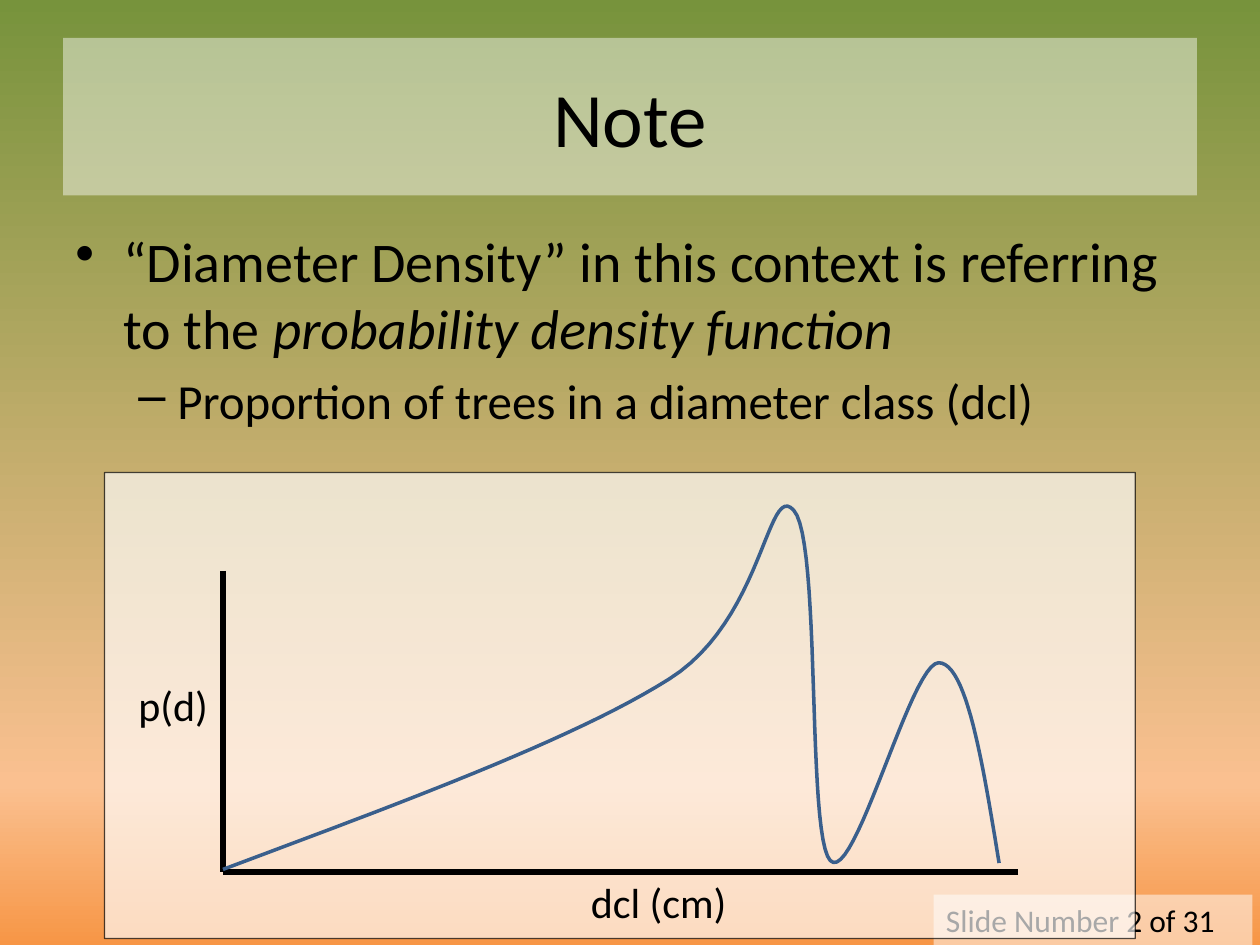
import copy

import pptx
import pptx.dml.color
import pptx.enum.shapes
import pptx.enum.text
import pptx.oxml.ns
import pptx.util
from lxml import etree
from pptx.oxml.ns import qn
from pptx.util import Inches

COLORS = {
    "green": "77933C",
    "peach": "FAC090",
    "orange": "F79646",
    "white": "FFFFFF",
    "black": "000000",
    "curve": "3A5F8C",
}


def paint(color_format, name):
    color_format.rgb = pptx.dml.color.RGBColor.from_string(COLORS[name])


def write(para, text, size, italic=False):
    span = para.add_run()
    span.text = text
    span.font.name = "Calibri"
    span.font.size = pptx.util.Pt(size)
    span.font.italic = italic
    paint(span.font.color, "black")


deck = pptx.Presentation()
deck.slide_width, deck.slide_height = Inches(10), Inches(7.5)
page = deck.slides.add_slide(deck.slide_layouts[5])

# Background gradient, top to bottom
background = page.background.fill
background.gradient()
background.gradient_angle = 270
stop_list = page._element.find(".//" + qn("a:gsLst"))
stop_list.insert(1, copy.deepcopy(stop_list[0]))
stops = [(0, "green"), (0.83, "peach"), (1, "orange")]
for stop, (position, name) in zip(background.gradient_stops, stops):
    stop.position = position
    paint(stop.color, name)

# Title
title = page.shapes.title
title.left, title.top = Inches(0.5), Inches(0.3)
title.width, title.height = Inches(9), Inches(1.25)
title.text_frame.vertical_anchor = pptx.enum.text.MSO_ANCHOR.MIDDLE
heading = title.text_frame.paragraphs[0]
heading.alignment = pptx.enum.text.PP_ALIGN.CENTER
write(heading, "Note", 44)

# Slide number
rectangle = pptx.enum.shapes.MSO_SHAPE.RECTANGLE
footer = page.shapes.add_shape(rectangle, Inches(7.41), Inches(7.1), Inches(2.53), Inches(0.4))
footer.line.fill.background()
footer.text_frame.word_wrap = False
footer.text_frame.vertical_anchor = pptx.enum.text.MSO_ANCHOR.TOP
number = footer.text_frame.paragraphs[0]
number.alignment = pptx.enum.text.PP_ALIGN.LEFT
write(number, "Slide Number 2 of 31", 18)

# Bulleted text: size, left margin, hanging indent, bullet, runs with italic flag
body = page.shapes.add_textbox(Inches(0.5), Inches(1.75), Inches(9), Inches(4.95))
body.text_frame.word_wrap = True
items = [
    (32, 0.38, 0.38, "•", [
        ("“Diameter Density” in this context is referring to the ", False),
        ("probability density function", True),
    ]),
    (28, 0.81, 0.31, "–", [("Proportion of trees in a diameter class (dcl)", False)]),
]
for level, (size, margin, hanging, bullet, spans) in enumerate(items):
    para = body.text_frame.add_paragraph() if level else body.text_frame.paragraphs[0]
    properties = para._p.get_or_add_pPr()
    properties.set("marL", str(Inches(margin)))
    properties.set("indent", str(-Inches(hanging)))
    etree.SubElement(properties, qn("a:buChar")).set("char", bullet)
    para.level = level
    if level:
        para.space_before = pptx.util.Pt(5.6)
    for text, italic in spans:
        write(para, text, size, italic)

# Plot panel
plot = page.shapes.add_group_shape().shapes
panel = plot.add_shape(rectangle, Inches(0.83), Inches(3.75), Inches(8.18), Inches(3.7))
panel.line.width = pptx.util.Pt(0.75)
paint(panel.line.color, "black")
outline = panel._element.spPr.find(qn("a:ln")).find(".//" + qn("a:srgbClr"))
etree.SubElement(outline, qn("a:alpha")).set("val", "70000")

# Translucent white fills
for shape, opacity in [(title, 45), (footer, 51), (panel, 66)]:
    shape.shadow.inherit = False
    shape.fill.solid()
    paint(shape.fill.fore_color, "white")
    fill_color = shape._element.spPr.find(qn("a:solidFill")).find(qn("a:srgbClr"))
    etree.SubElement(fill_color, qn("a:alpha")).set("val", str(opacity * 1000))

# Axes from the shared origin
origin_x, origin_y = 1.77, 6.92
for end_x, end_y in [(origin_x, 4.53), (8.08, origin_y)]:
    axis = plot.add_connector(
        pptx.enum.shapes.MSO_CONNECTOR.STRAIGHT,
        Inches(end_x), Inches(end_y), Inches(origin_x), Inches(origin_y),
    )
    axis.line.width = pptx.util.Pt(3.25)
    paint(axis.line.color, "black")
    etree.SubElement(axis._element.spPr, qn("a:effectLst"))

# Density curve, sampled from cubic Bezier segments
start = (1.77, 6.9)
segments = [
    [(3.16, 6.38), (4.55, 5.87), (5.31, 5.39)],
    [(6.06, 4.92), (6.09, 3.81), (6.3, 4.05)],
    [(6.52, 4.29), (6.4, 6.63), (6.59, 6.83)],
    [(6.78, 7.03), (7.23, 5.26), (7.45, 5.26)],
    [(7.67, 5.26), (7.8, 6.05), (7.93, 6.85)],
]
steps = 24
points = []
knot = start
for segment in segments:
    controls = [knot] + segment
    for step in range(1, steps + 1):
        t = step / steps
        weights = [(1 - t) ** 3, 3 * t * (1 - t) ** 2, 3 * t ** 2 * (1 - t), t ** 3]
        points.append(tuple(
            Inches(sum(weight * control[i] for weight, control in zip(weights, controls)))
            for i in (0, 1)
        ))
    knot = segment[-1]
builder = plot.build_freeform(Inches(start[0]), Inches(start[1]))
builder.add_line_segments(points, close=False)
curve = builder.convert_to_shape()
curve.shadow.inherit = False
curve.fill.background()
curve.line.width = pptx.util.Pt(2)
paint(curve.line.color, "curve")

# Axis labels
for text, left, top, width in [("p(d)", 1, 5.34, 0.76), ("dcl (cm)", 4.59, 6.91, 1.29)]:
    label = plot.add_textbox(Inches(left), Inches(top), Inches(width), Inches(0.5))
    label.text_frame.word_wrap = False
    label.text_frame.auto_size = pptx.enum.text.MSO_AUTO_SIZE.SHAPE_TO_FIT_TEXT
    write(label.text_frame.paragraphs[0], text, 24)

deck.save("out.pptx")
